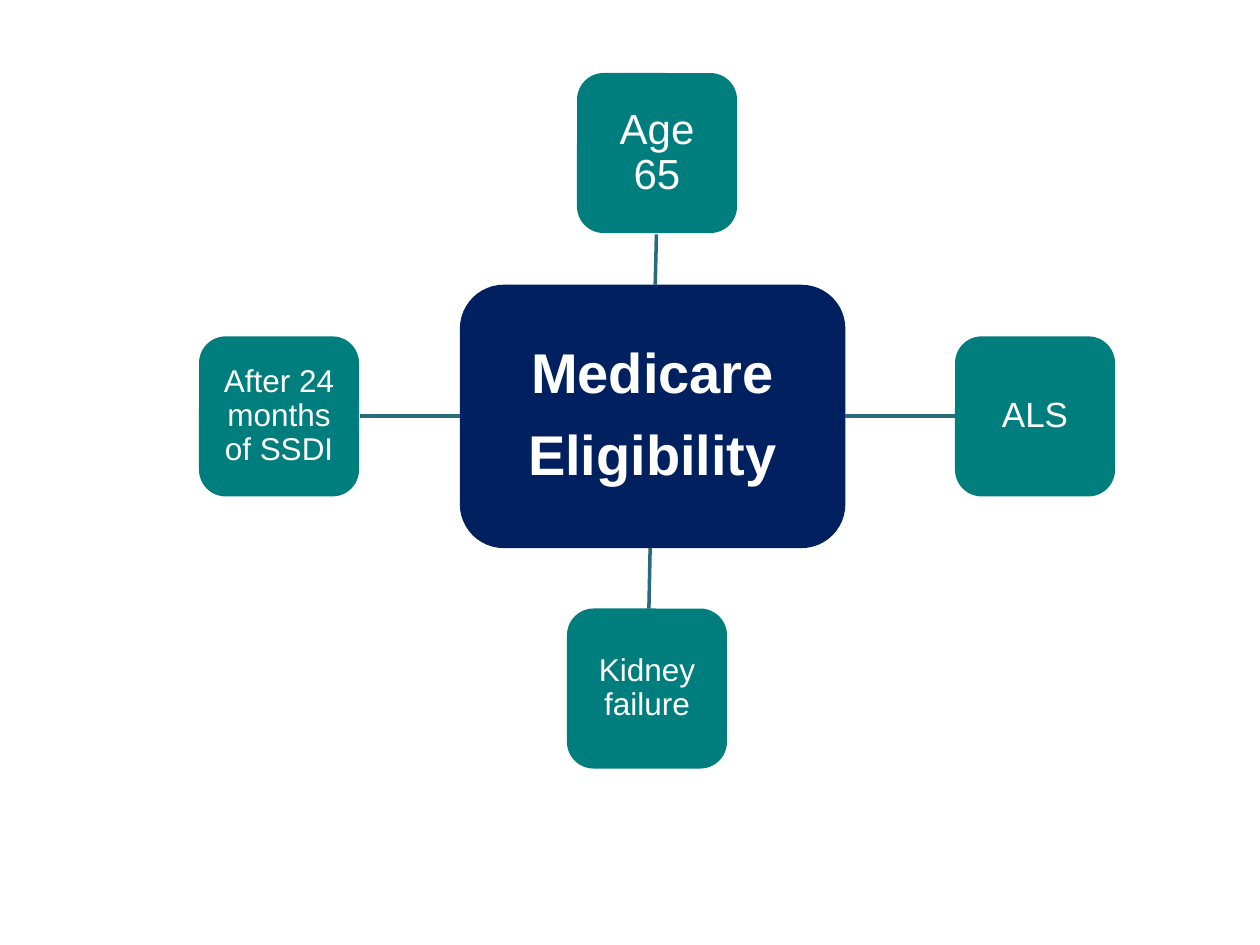
from pptx import Presentation
from pptx.dml.color import RGBColor
from pptx.enum.shapes import MSO_CONNECTOR as CONN, MSO_SHAPE as SHAPE
from pptx.enum.text import MSO_ANCHOR as ANCHOR, PP_ALIGN as ALIGN
from pptx.oxml.ns import qn
from pptx.util import Inches, Pt
from lxml.etree import SubElement


def rgb(value):
    """Turn a hex string into a colour."""
    return RGBColor.from_string(value)


def write(tf, text, size, font="Arial", color="FFFFFF", bold=False, inset=0.05, gap=0):
    """Fill a text frame with centred paragraphs, one per line of text."""
    tf.word_wrap = True
    tf.vertical_anchor = ANCHOR.MIDDLE
    tf.margin_left = tf.margin_right = tf.margin_top = tf.margin_bottom = Inches(inset)
    for i, line in enumerate(text.split("\n")):
        p = tf.add_paragraph() if i else tf.paragraphs[0]
        p.alignment = ALIGN.CENTER
        p.line_spacing = 0.9
        p.space_before = Pt(gap if i else 0)
        r = p.add_run()
        r.text = line
        r.font.name, r.font.size, r.font.bold = font, Pt(size), bold
        r.font.color.rgb = rgb(color)


class Diagram:
    """Draw the boxes and spokes of a radial diagram on one slide."""

    hub_fill = "002060"
    node_fill = "007D7D"
    line_color = "276B7C"
    node_size = 1.27

    def __init__(self, s):
        """Keep the slide to draw on."""
        self.s = s

    def box(self, x, y, w, h, fill, text, size, **fmt):
        """Add a rounded box with text."""
        sp = self.s.shapes.add_shape(
            SHAPE.ROUNDED_RECTANGLE, Inches(x), Inches(y), Inches(w), Inches(h))
        sp.shadow.inherit = False
        sp.fill.solid()
        sp.fill.fore_color.rgb = rgb(fill)
        sp.line.fill.background()
        write(sp.text_frame, text, size, **fmt)

    def hub(self, x, y, w, h, text):
        """Add the central box."""
        self.box(x, y, w, h, self.hub_fill, text, 32, bold=True, inset=0.09, gap=12.5)

    def node(self, x, y, text, size, inset):
        """Add an outer box."""
        self.box(x, y, self.node_size, self.node_size, self.node_fill, text, size, inset=inset)

    def spoke(self, x1, y1, x2, y2):
        """Add a line from the hub to a node."""
        c = self.s.shapes.add_connector(
            CONN.STRAIGHT, Inches(x1), Inches(y1), Inches(x2), Inches(y2))
        c.line.color.rgb = rgb(self.line_color)
        c.line.width = Pt(2)
        SubElement(c._element.spPr, qn("a:effectLst"))


def main():
    """Build the slide and save it."""
    prs = Presentation()
    prs.slide_width, prs.slide_height = Inches(10), Inches(7.5)
    d = Diagram(prs.slides.add_slide(prs.slide_layouts[6]))
    d.hub(3.65, 2.26, 3.06, 2.09, "Medicare\nEligibility")
    nodes = [
        ("Age 65", 24, 0.07, (4.58, 0.58), (5.2, 2.26, 5.21, 1.86)),
        ("ALS", 20, 0.06, (7.58, 2.67), (6.71, 3.3, 7.58, 3.3)),
        ("Kidney failure", 18, 0.05, (4.5, 4.83), (5.16, 4.35, 5.15, 4.83)),
        ("After 24 months of SSDI", 18, 0.05, (1.58, 2.67), (3.65, 3.3, 2.86, 3.3)),
    ]
    for text, size, inset, corner, ends in nodes:
        d.spoke(*ends)
        d.node(*corner, text, size, inset)
    prs.save("out.pptx")


if __name__ == "__main__":
    main()
